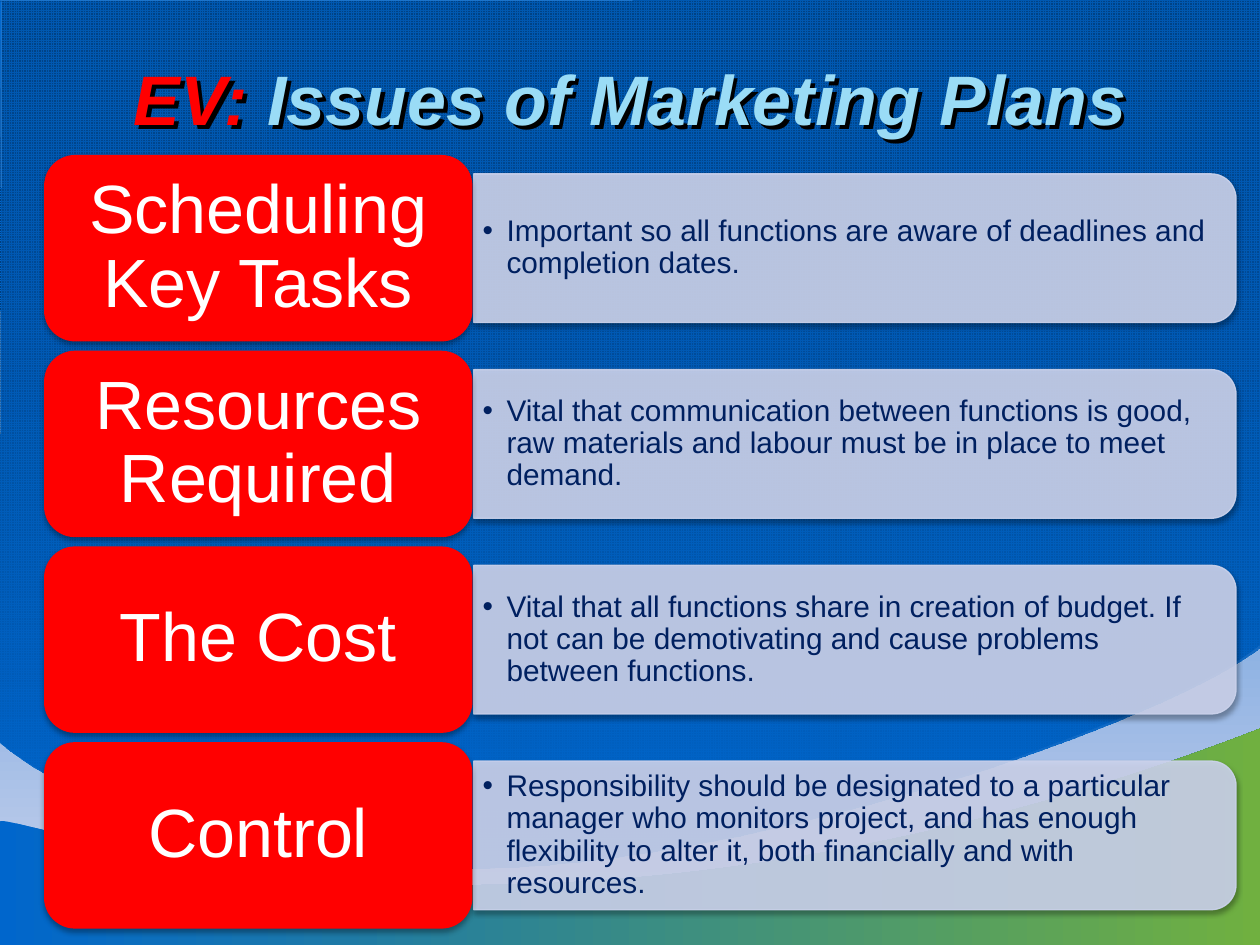
from dataclasses import dataclass

import lxml.etree
import pptx
import pptx.dml.color
import pptx.enum.dml
import pptx.enum.shapes
import pptx.enum.text
import pptx.oxml
import pptx.oxml.ns
import pptx.util

Inches = pptx.util.Inches
SHAPE = pptx.enum.shapes.MSO_SHAPE
ALIGN = pptx.enum.text.PP_ALIGN
qn = pptx.oxml.ns.qn
Point = tuple[float, float]


@dataclass(frozen=True)
class Theme:
    font: str = "Arial"
    blue: str = "0066CC"
    deep: str = "004992"
    dark: str = "003D7B"
    green: str = "70B040"
    mist: str = "CDD4ED"
    panel: str = "CCD3EC"
    red: str = "FF0000"
    sky: str = "9ADCF6"
    navy: str = "002060"
    white: str = "FFFFFF"
    title: int = 40
    label: int = 39
    body: int = 17


@dataclass(frozen=True)
class Curve:
    """A cubic curve that leaves from the last point of the outline."""
    first: Point
    second: Point
    end: Point


@dataclass(frozen=True)
class Issue:
    label: str
    detail: str


THEME = Theme()
ISSUES = [
    Issue("Scheduling Key Tasks",
          "Important so all functions are aware of deadlines and completion dates."),
    Issue("Resources Required",
          "Vital that communication between functions is good, raw materials "
          "and labour must be in place to meet demand."),
    Issue("The Cost",
          "Vital that all functions share in creation of budget. If not can be "
          "demotivating and cause problems between functions."),
    Issue("Control",
          "Responsibility should be designated to a particular manager who monitors "
          "project, and has enough flexibility to alter it, both financially and "
          "with resources."),
]
GRID = [(-0.02, 5.87), Curve((0.1, 5.99), (1.1, 6.78), (3.42, 6.88)),
        Curve((5.74, 6.98), (9.37, 5.67), (10.01, 5.11)),
        (10.01, -0.02), (0, 0), (0.01, 0.02)]
SHADE = [(0, 5.89), Curve((0.12, 6.01), (1.11, 6.79), (3.44, 6.89)),
         Curve((5.76, 6.99), (9.38, 5.69), (10.03, 5.12)),
         (10.03, 0), (0.01, 0.01), (0.02, 0.03)]
HILL = [(0, 6.52), Curve((0.03, 6.47), (1.3, 6.92), (3.06, 7.01)),
        Curve((4.82, 7.09), (7.23, 6.86), (10.01, 5.78)),
        (10, 7.53), (-0.02, 7.52)]

TOP, LAST, LEFT = 1.23, 5.89, 0.35
PITCH = (LAST - TOP) / (len(ISSUES) - 1)
LABEL_W, LABEL_H = 3.4, 1.48
PANEL_X, PANEL_W, PANEL_H = 3.76, 6.05, 1.18
TEXT_W, TEXT_H = 5.99, 1.07


def rgb(code: str) -> pptx.dml.color.RGBColor:
    return pptx.dml.color.RGBColor.from_string(code)


def fade(node, share: int) -> None:
    """Give every plain colour below the node this opacity in percent."""
    for tint in node.iter(qn("a:srgbClr")):
        lxml.etree.SubElement(tint, qn("a:alpha")).set("val", str(share * 1000))


def shadow(alpha: int, blur: float, drop: float, angle: int):
    xml = (f'<a:effectLst {pptx.oxml.ns.nsdecls("a")}>'
           f'<a:outerShdw blurRad="{pptx.util.Pt(blur)}" dist="{pptx.util.Pt(drop)}" '
           f'dir="{angle * 60000}" algn="ctr" rotWithShape="0"><a:srgbClr val="000000">'
           f'<a:alpha val="{alpha * 1000}"/></a:srgbClr></a:outerShdw></a:effectLst>')
    return pptx.oxml.parse_xml(xml)


def blend(fill, start: str, end: str, angle: int) -> None:
    """Fill from start to end; the angle runs clockwise."""
    fill.gradient()
    fill.gradient_angle = (360 - angle) % 360
    for stop, place, code in zip(fill.gradient_stops, (0, 1), (start, end)):
        stop.position = place
        stop.color.rgb = rgb(code)


def bend(line, curve: Curve, wave) -> None:
    """Turn a straight segment into the curve, measured from the wave's corner."""
    line.tag = qn("a:cubicBezTo")
    for x, y in (curve.second, curve.first):
        knot = lxml.etree.Element(qn("a:pt"))
        knot.set("x", str(Inches(x) - wave.left))
        knot.set("y", str(Inches(y) - wave.top))
        line.insert(0, knot)


def draw_wave(slide, outline: list):
    ends = [part.end if isinstance(part, Curve) else part for part in outline]
    spots = [(Inches(x), Inches(y)) for x, y in ends]
    pen = slide.shapes.build_freeform(*spots[0])
    pen.add_line_segments(spots[1:], close=True)
    wave = pen.convert_to_shape()
    lines = list(wave.element.iter(qn("a:lnTo")))
    for line, part in zip(lines, outline[1:]):
        if isinstance(part, Curve):
            bend(line, part, wave)
    wave.line.fill.background()
    wave.shadow.inherit = False
    return wave


def draw_scene(slide) -> None:
    blend(slide.background.fill, THEME.blue, THEME.mist, 90)
    grid = draw_wave(slide, GRID)
    grid.fill.patterned()
    grid.fill.pattern = pptx.enum.dml.MSO_PATTERN.SMALL_GRID
    grid.fill.fore_color.rgb = rgb(THEME.blue)
    grid.fill.back_color.rgb = rgb(THEME.dark)
    shade = draw_wave(slide, SHADE)
    blend(shade.fill, THEME.deep, THEME.blue, 90)
    fade(next(shade.element.iter(qn("a:gs"))), 46)
    blend(draw_wave(slide, HILL).fill, THEME.blue, THEME.green, 0)


def style(run, size: int, code: str) -> None:
    run.font.name = THEME.font
    run.font.size = pptx.util.Pt(size)
    run.font.color.rgb = rgb(code)


def set_frame(shape, side: float, edge: float):
    frame = shape.text_frame
    frame.word_wrap = True
    frame.vertical_anchor = pptx.enum.text.MSO_ANCHOR.MIDDLE
    frame.margin_left = frame.margin_right = Inches(side)
    frame.margin_top = frame.margin_bottom = Inches(edge)
    return frame


def write(shape, text: str, size: int, code: str, side: float, edge: float):
    frame = set_frame(shape, side, edge)
    frame.text = text
    line = frame.paragraphs[0]
    line.line_spacing = 0.9
    style(line.runs[0], size, code)
    return line


def draw_title(slide) -> None:
    box = slide.shapes.add_textbox(Inches(0.5), Inches(0.3), Inches(9), Inches(0.95))
    box.element.spPr.append(shadow(100, 0, 3.2, 45))
    line = set_frame(box, 0.1, 0.05).paragraphs[0]
    line.alignment = ALIGN.CENTER
    for text, code in (("EV: ", THEME.red), ("Issues of Marketing Plans", THEME.sky)):
        run = line.add_run()
        run.text = text
        style(run, THEME.title, code)
        run.font.bold = run.font.italic = True


def draw_block(slide, kind, x: float, y: float, w: float, h: float, code: str):
    block = slide.shapes.add_shape(kind, Inches(x), Inches(y), Inches(w), Inches(h))
    block.fill.solid()
    block.fill.fore_color.rgb = rgb(code)
    block.line.fill.background()
    block.element.spPr.append(shadow(35, 3.1, 1.8, 90))
    return block


def draw_issue(slide, issue: Issue, top: float) -> None:
    mid = top + LABEL_H / 2
    # The panel stands upright and is turned a quarter about its centre.
    panel = draw_block(slide, SHAPE.ROUND_2_SAME_RECTANGLE,
                       PANEL_X + (PANEL_W - PANEL_H) / 2, mid - PANEL_W / 2,
                       PANEL_H, PANEL_W, THEME.panel)
    panel.rotation = 90
    panel.line.color.rgb = rgb(THEME.panel)
    panel.line.width = pptx.util.Pt(0.75)
    for part in ("a:solidFill", "a:ln"):
        fade(panel.element.spPr.find(qn(part)), 90)

    box = slide.shapes.add_textbox(Inches(PANEL_X), Inches(mid - TEXT_H / 2),
                                   Inches(TEXT_W), Inches(TEXT_H))
    line = write(box, issue.detail, THEME.body, THEME.navy, 0.07, 0.04)
    line.level = 1
    props = line._p.get_or_add_pPr()
    props.set("marL", str(Inches(0.19)))
    props.set("indent", str(Inches(-0.19)))
    lxml.etree.SubElement(props, qn("a:buFont")).set("typeface", THEME.font)
    lxml.etree.SubElement(props, qn("a:buChar")).set("char", "•")

    label = draw_block(slide, SHAPE.ROUNDED_RECTANGLE, LEFT, top,
                       LABEL_W, LABEL_H, THEME.red)
    line = write(label, issue.label, THEME.label, THEME.white, 0.16, 0.08)
    line.alignment = ALIGN.CENTER


def main() -> None:
    deck = pptx.Presentation()
    deck.slide_width, deck.slide_height = Inches(10), Inches(7.5)
    slide = deck.slides.add_slide(deck.slide_layouts[6])
    draw_scene(slide)
    draw_title(slide)
    for row, issue in enumerate(ISSUES):
        draw_issue(slide, issue, TOP + row * PITCH)
    deck.save("out.pptx")


if __name__ == "__main__":
    main()
